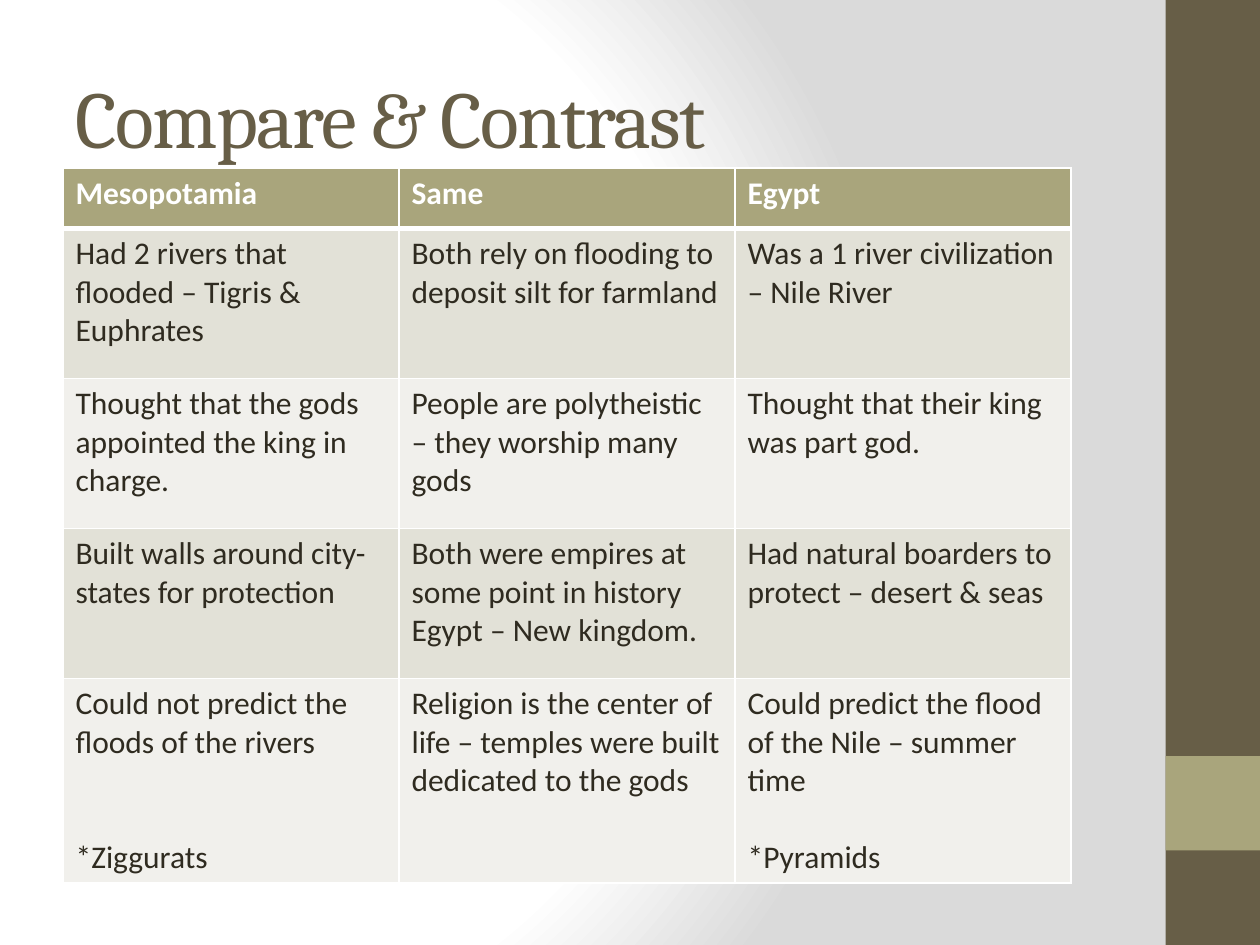
from lxml.etree import SubElement
from pptx import Presentation
from pptx.dml.color import RGBColor
from pptx.enum.shapes import MSO_SHAPE
from pptx.enum.text import MSO_ANCHOR, MSO_AUTO_SIZE, PP_ALIGN
from pptx.oxml import parse_xml
from pptx.oxml.ns import nsdecls, qn
from pptx.util import Pt

BROWN = RGBColor(0x67, 0x5E, 0x47)
KHAKI = RGBColor(0xA9, 0xA5, 0x7C)
INK = RGBColor(0x2F, 0x2B, 0x20)
WHITE = RGBColor(0xFF, 0xFF, 0xFF)
GREY = RGBColor(0xDA, 0xDA, 0xDA)
BANDS = (RGBColor(0xF1, 0xF0, 0xEC), RGBColor(0xE2, 0xE1, 0xD7))

LINE_HEIGHT = 22
ROWS = [
    ["Mesopotamia", "Same", "Egypt"],
    ["Had 2 rivers that flooded – Tigris & Euphrates",
     "Both rely on flooding to deposit silt for farmland",
     "Was a 1 river civilization – Nile River"],
    ["Thought that the gods appointed the king in charge.",
     "People are polytheistic – they worship many gods",
     "Thought that their king was part god."],
    ["Built walls around city-states for protection",
     "Both were empires at some point in history\nEgypt – New kingdom.",
     "Had natural boarders to protect – desert & seas"],
    ["Could not predict the floods of the rivers\n*Ziggurats",
     "Religion is the center of life – temples were built dedicated to the gods",
     "Could predict the flood of the Nile – summer time\n*Pyramids"],
]
ROW_HEIGHTS = [34.5, 85.7, 85.7, 85.7, 117]
GAP_LINES = {"*Ziggurats": 2, "*Pyramids": 1}


class Deck:
    heading_font = "Cambria"
    body_font = "Calibri"

    def __init__(self, prs):
        self.s = prs.slides.add_slide(prs.slide_layouts[5])

    def style(self, p, font, size, color, bold=False):
        p.alignment = PP_ALIGN.LEFT
        for r in p.runs:
            r.font.name = font
            r.font.size = Pt(size)
            r.font.bold = bold
            r.font.color.rgb = color

    def background(self, stops):
        gs = "".join(f'<a:gs pos="{pos * 1000}"><a:srgbClr val="{color}"/></a:gs>'
                     for pos, color in stops)
        bg = parse_xml(
            f'<p:bg {nsdecls("p", "a")}><p:bgPr><a:gradFill rotWithShape="1">'
            f'<a:gsLst>{gs}</a:gsLst><a:path path="circle">'
            '<a:fillToRect l="20000" t="50000" r="100000" b="50000"/>'
            '</a:path></a:gradFill><a:effectLst/></p:bgPr></p:bg>')
        self.s.element.cSld.insert(0, bg)

    def rect(self, x, y, w, h, color):
        sp = self.s.shapes.add_shape(MSO_SHAPE.RECTANGLE, Pt(x), Pt(y), Pt(w), Pt(h))
        sp.shadow.inherit = False
        sp.fill.solid()
        sp.fill.fore_color.rgb = color
        sp.line.fill.background()

    def title(self, text, x, y, w, h):
        sp = self.s.shapes.title
        sp.left, sp.top, sp.width, sp.height = Pt(x), Pt(y), Pt(w), Pt(h)
        tf = sp.text_frame
        tf.text = text
        tf.word_wrap = True
        tf.auto_size = MSO_AUTO_SIZE.NONE
        tf.vertical_anchor = MSO_ANCHOR.MIDDLE
        p = tf.paragraphs[0]
        self.style(p, self.heading_font, 46, BROWN)
        p.runs[0].font._element.set("spc", "-100")

    def border(self, cell, side, width):
        ln = SubElement(cell._tc.get_or_add_tcPr(), qn(f"a:ln{side}"), w=str(Pt(width)))
        fill = SubElement(ln, qn("a:solidFill"))
        SubElement(fill, qn("a:srgbClr"), val=str(WHITE))

    def cell(self, cell, text, row):
        header = row == 0
        widths = {"L": 1, "R": 1, "T": 3 if row == 1 else 1, "B": 3 if header else 1}
        for side, width in widths.items():
            self.border(cell, side, width)
        cell.fill.solid()
        cell.fill.fore_color.rgb = KHAKI if header else BANDS[row % 2]
        cell.text_frame.text = text
        for p in cell.text_frame.paragraphs:
            p.space_before = Pt(GAP_LINES.get(p.text, 0) * LINE_HEIGHT)
            self.style(p, self.body_font, 18, WHITE if header else INK, header)

    def table(self, rows, heights, x, y, w):
        n = len(rows[0])
        frame = self.s.shapes.add_table(len(rows), n, Pt(x), Pt(y), Pt(w), Pt(sum(heights)))
        table = frame.table
        for column in table.columns:
            column.width = Pt(w / n)
        for i, (texts, height) in enumerate(zip(rows, heights)):
            table.rows[i].height = Pt(height)
            for j, text in enumerate(texts):
                self.cell(table.cell(i, j), text, i)


def main():
    prs = Presentation()
    prs.slide_width, prs.slide_height = Pt(720), Pt(540)
    deck = Deck(prs)
    deck.background([(0, WHITE), (75, WHITE), (100, GREY)])
    deck.rect(666, 0, 54, 540, BROWN)
    deck.rect(666, 432, 54, 54, KHAKI)
    deck.title("Compare & Contrast", 36, 21.6, 600, 90)
    deck.table(ROWS, ROW_HEIGHTS, 36, 96, 576)
    prs.save("out.pptx")


if __name__ == "__main__":
    main()
